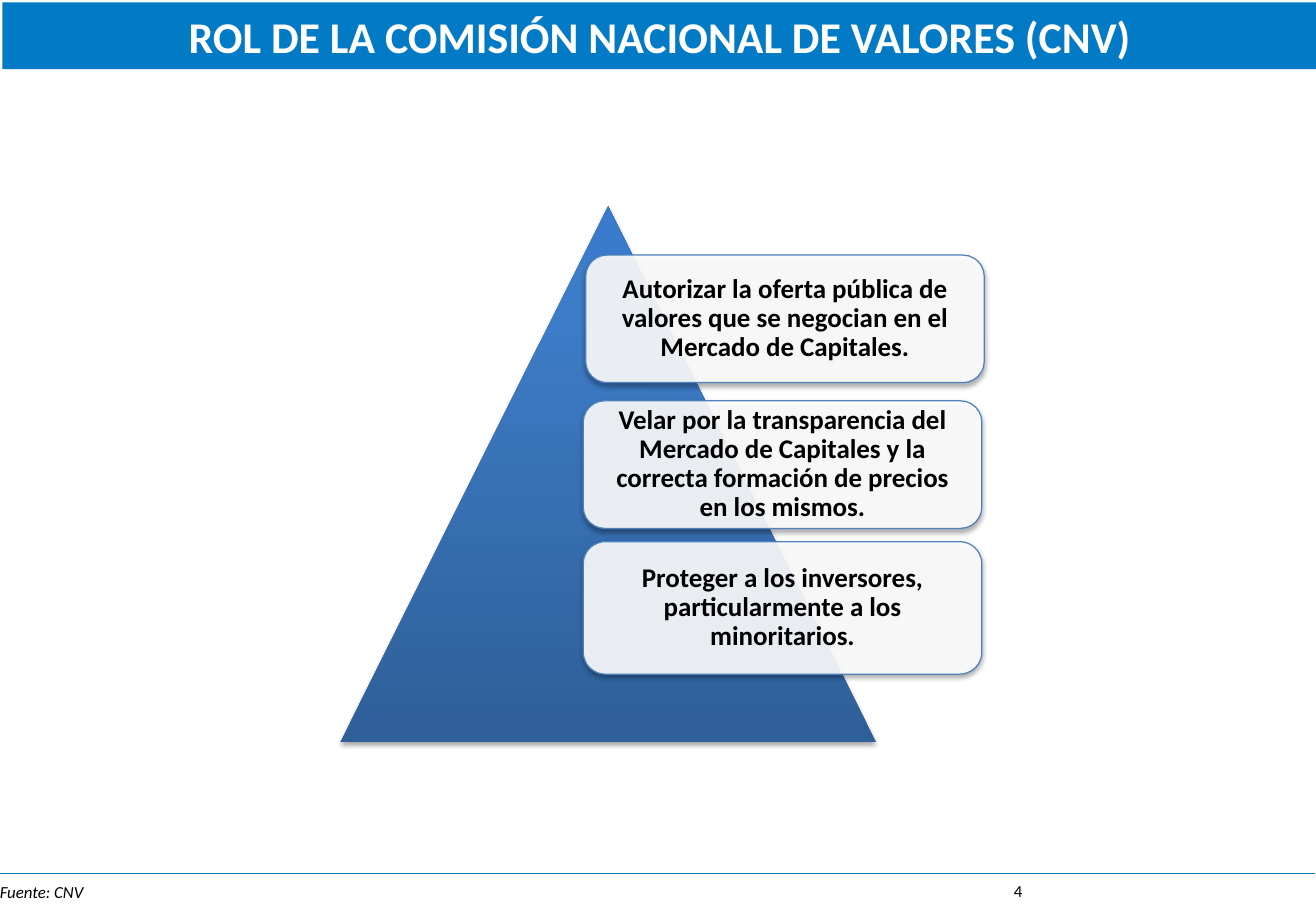
from copy import deepcopy
from dataclasses import dataclass

from lxml import etree
from pptx import Presentation
from pptx.dml.color import RGBColor
from pptx.enum import shapes, text
from pptx.oxml import ns
from pptx.util import Inches, Pt


@dataclass(frozen=True)
class Theme:
    font: str = "Calibri"
    white: str = "FFFFFF"
    black: str = "000000"
    banner: str = "037AC6"
    rule: str = "037AB5"
    card_line: str = "4F81BD"
    pyramid: tuple = ((0, "2F5F99"), (0.8, "3D7CC7"), (1, "3A7CCB"))
    title_size: int = 26
    card_size: int = 16
    small_size: int = 10
    line_width: float = 0.75


def color(value):
    return RGBColor.from_string(value)


def add_child(parent, tag, **attributes):
    values = {name: str(value) for name, value in attributes.items()}
    return etree.SubElement(parent, ns.qn(tag), values)


def write_text(shape, content, *, theme, size, ink, bold=False, italic=False,
               align=text.PP_ALIGN.CENTER, anchor=text.MSO_ANCHOR.MIDDLE,
               spacing=1.0, inset=0.1, wrap=True):
    frame = shape.text_frame
    frame.word_wrap = wrap
    frame.vertical_anchor = anchor
    frame.margin_left = frame.margin_right = Inches(inset)
    paragraph = frame.paragraphs[0]
    paragraph.alignment = align
    paragraph.line_spacing = spacing
    run = paragraph.add_run()
    run.text = content
    run.font.name = theme.font
    run.font.size = Pt(size)
    run.font.bold = bold
    run.font.italic = italic
    run.font.color.rgb = color(ink)


class SlideBuilder:
    def __init__(self, slide, theme):
        self.slide = slide
        self.theme = theme

    def shape(self, kind, left, top, width, height):
        shape = self.slide.shapes.add_shape(
            kind, Inches(left), Inches(top), Inches(width), Inches(height))
        shape.shadow.inherit = False
        shape.line.fill.background()
        return shape

    def soft_shadow(self, shape):
        effects = shape.element.spPr.find(ns.qn("a:effectLst"))
        shadow = add_child(effects, "a:outerShdw", blurRad=Pt(3.1), dist=Pt(1.8),
                           dir=90 * 60000, rotWithShape=0)
        ink = add_child(shadow, "a:srgbClr", val=self.theme.black)
        add_child(ink, "a:alpha", val=35000)

    def banner(self, content):
        shape = self.shape(shapes.MSO_SHAPE.RECTANGLE, 0.02, 0.02, 10.83, 0.55)
        shape.fill.solid()
        shape.fill.fore_color.rgb = color(self.theme.banner)
        write_text(shape, content, theme=self.theme, size=self.theme.title_size,
                   ink=self.theme.white, bold=True)

    def pyramid(self, left, top, side):
        shape = self.shape(shapes.MSO_SHAPE.ISOSCELES_TRIANGLE, left, top, side, side)
        shape.fill.gradient()
        shape.fill.gradient_angle = 90
        stop_list = shape.element.spPr.find(".//" + ns.qn("a:gsLst"))
        stop_list.append(deepcopy(stop_list[-1]))
        for stop, (position, value) in zip(shape.fill.gradient_stops, self.theme.pyramid):
            stop.position = position
            stop.color.rgb = color(value)
        self.soft_shadow(shape)

    def card(self, content, left, top, height):
        shape = self.shape(shapes.MSO_SHAPE.ROUNDED_RECTANGLE, left, top, 3.28, height)
        shape.fill.solid()
        shape.fill.fore_color.rgb = color(self.theme.white)
        fill_color = shape.element.spPr.find(ns.qn("a:solidFill"))[0]
        add_child(fill_color, "a:alpha", val=90000)
        shape.line.color.rgb = color(self.theme.card_line)
        shape.line.width = Pt(self.theme.line_width)
        self.soft_shadow(shape)
        write_text(shape, content, theme=self.theme, size=self.theme.card_size,
                   ink=self.theme.black, bold=True, spacing=0.9, inset=0.12)

    def label(self, content, left, top, width, **style):
        box = self.slide.shapes.add_textbox(
            Inches(left), Inches(top), Inches(width), Inches(0.27))
        write_text(box, content, theme=self.theme, size=self.theme.small_size,
                   ink=self.theme.black, anchor=text.MSO_ANCHOR.TOP, **style)

    def rule(self, left, right, top):
        line = self.slide.shapes.add_connector(
            shapes.MSO_CONNECTOR.STRAIGHT,
            Inches(left), Inches(top), Inches(right), Inches(top))
        line.line.color.rgb = color(self.theme.rule)
        line.line.width = Pt(self.theme.line_width)
        add_child(line.element.spPr, "a:effectLst")


CARDS = (
    ("Autorizar la oferta pública de valores que se negocian en el Mercado de Capitales.",
     4.82, 2.1, 1.05),
    ("Velar por la transparencia del Mercado de Capitales y la correcta formación "
     "de precios en los mismos.", 4.8, 3.3, 1.05),
    ("Proteger a los inversores, particularmente a los minoritarios.", 4.8, 4.46, 1.09),
)


def main():
    presentation = Presentation()
    presentation.slide_width = Inches(10.83)
    presentation.slide_height = Inches(7.5)
    slide = presentation.slides.add_slide(presentation.slide_layouts[6])
    builder = SlideBuilder(slide, Theme())
    builder.rule(-0.01, 10.82, 7.19)
    builder.label("4", 7.7, 7.2, 1.36)
    builder.banner("ROL DE LA COMISIÓN NACIONAL DE VALORES (CNV)")
    builder.pyramid(2.8, 1.7, 4.41)
    for card in CARDS:
        builder.card(*card)
    builder.label("Fuente: CNV", -0.1, 7.21, 0.9, italic=True,
                  align=text.PP_ALIGN.LEFT, wrap=False)
    presentation.save("out.pptx")


if __name__ == "__main__":
    main()
